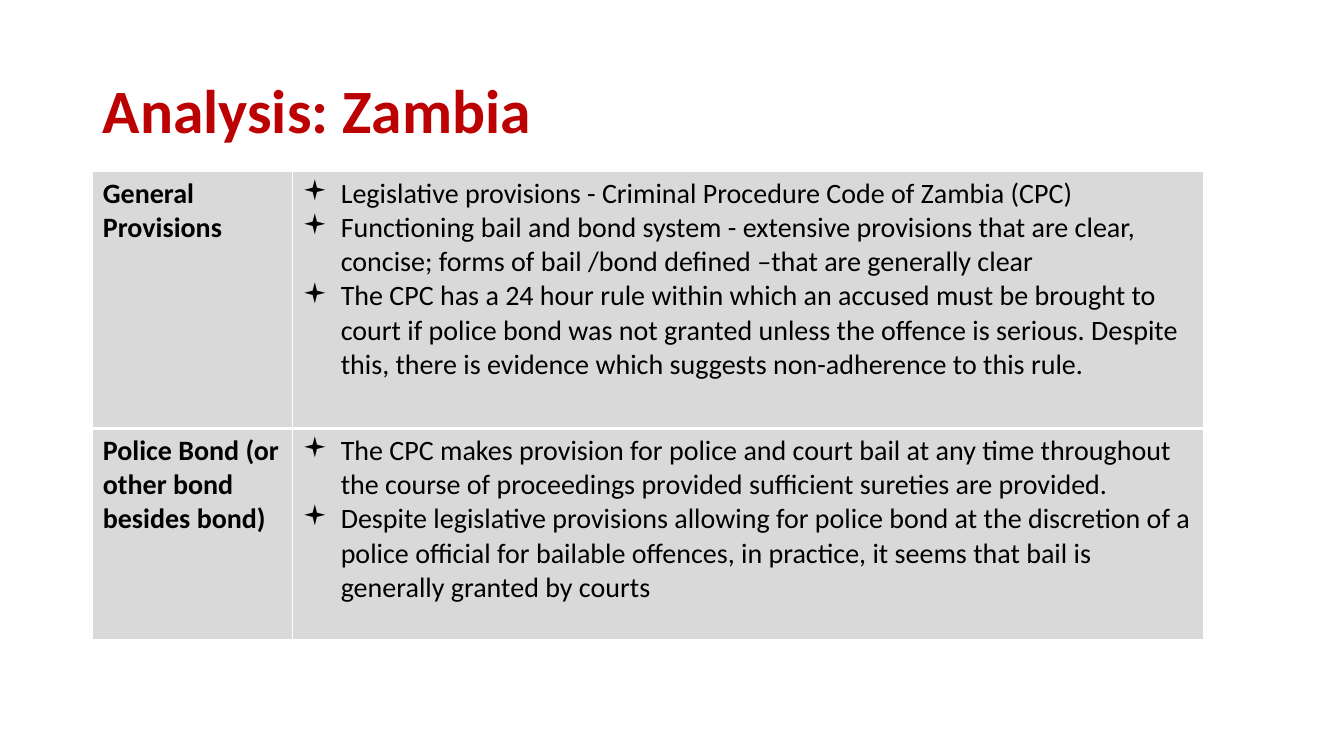
from lxml import etree
from pptx import Presentation
from pptx.dml.color import RGBColor
from pptx.enum.text import MSO_ANCHOR, PP_ALIGN
from pptx.oxml.ns import qn
from pptx.util import Inches, Pt

LEFT, MIDDLE = PP_ALIGN.LEFT, MSO_ANCHOR.MIDDLE
COLORS = {"heading": "BB0101", "text": "000000", "cell": "D9D9D9", "border": "FFFFFF"}
FONT = "Calibri"
MARGIN = 0.92
COLUMN_WIDTHS = [1.98, 9.04]
ROW_HEIGHTS = [2.55, 2.1]
BULLET_INDENT = Inches(0.38)

PROVISIONS = [
    ("General Provisions", [
        "Legislative provisions - Criminal Procedure Code of Zambia (CPC)",
        "Functioning bail and bond system - extensive provisions that are clear, "
        "concise; forms of bail /bond defined –that are generally clear",
        "The CPC has a 24 hour rule within which an accused must be brought to court "
        "if police bond was not granted unless the offence is serious. Despite this, "
        "there is evidence which suggests non-adherence to this rule.",
    ]),
    ("Police Bond (or other bond besides bond)", [
        "The CPC makes provision for police and court bail at any time throughout "
        "the course of proceedings provided sufficient sureties are provided.",
        "Despite legislative provisions allowing for police bond at the discretion "
        "of a police official for bailable offences, in practice, it seems that bail "
        "is generally granted by courts",
    ]),
]


def style_font(paragraph, size, color, bold):
    font = paragraph.font
    font.name, font.size, font.bold = FONT, Pt(size), bold
    font.color.rgb = RGBColor.from_string(COLORS[color])


def style_cell(cell, top, bottom):
    properties = cell._tc.get_or_add_tcPr()
    for side, width in (("L", 1), ("R", 1), ("T", top), ("B", bottom)):
        line = etree.SubElement(properties, qn(f"a:ln{side}"), w=str(Pt(width)))
        line_fill = etree.SubElement(line, qn("a:solidFill"))
        etree.SubElement(line_fill, qn("a:srgbClr"), val=COLORS["border"])
    cell.fill.solid()
    cell.fill.fore_color.rgb = RGBColor.from_string(COLORS["cell"])


prs = Presentation()
prs.slide_width, prs.slide_height = Inches(13.33), Inches(7.5)
slide = prs.slides.add_slide(prs.slide_layouts[5])

# Title
title = slide.shapes.title
title.left, title.top = Inches(MARGIN), Inches(0.4)
title.width, title.height = Inches(11.5), Inches(1.45)
title.text_frame.text = "Analysis: Zambia"
title.text_frame.vertical_anchor = MIDDLE
heading = title.text_frame.paragraphs[0]
heading.alignment, heading.line_spacing = LEFT, 0.9
style_font(heading, 44, "heading", True)

# Table grid
table = slide.shapes.add_table(
    len(PROVISIONS), len(COLUMN_WIDTHS), Inches(MARGIN), Inches(1.7),
    Inches(sum(COLUMN_WIDTHS)), Inches(sum(ROW_HEIGHTS))).table
table.first_row = table.horz_banding = False
for column, width in zip(table.columns, COLUMN_WIDTHS):
    column.width = Inches(width)
for row, height in zip(table.rows, ROW_HEIGHTS):
    row.height = Inches(height)

# Topic and its bulleted findings in each row
for row_index, (topic, findings) in enumerate(PROVISIONS):
    topic_cell, findings_cell = table.rows[row_index].cells
    top, bottom = (1, 3) if row_index == 0 else (3, 1)
    for cell in (topic_cell, findings_cell):
        style_cell(cell, top, bottom)

    topic_cell.text = topic
    style_font(topic_cell.text_frame.paragraphs[0], 20, "text", True)

    findings_cell.text = "\n".join(findings)
    for finding in findings_cell.text_frame.paragraphs:
        layout = finding._p.get_or_add_pPr()
        layout.set("marL", str(BULLET_INDENT))
        layout.set("indent", str(-BULLET_INDENT))
        etree.SubElement(layout, qn("a:buFont"), typeface="Wingdings")
        etree.SubElement(layout, qn("a:buChar"), char="▪")
        style_font(finding, 20, "text", False)

prs.save("out.pptx")
